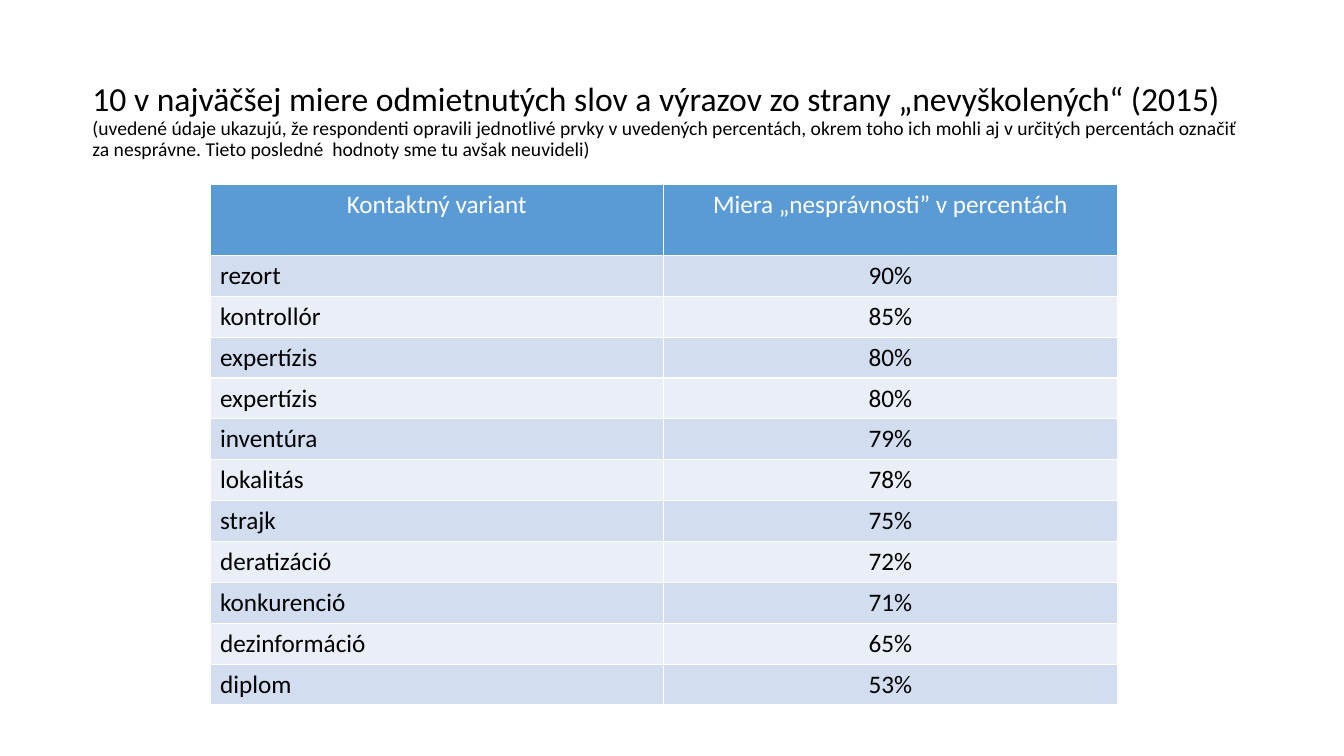
"""Builds a slide with a table of the words most often rejected by untrained respondents."""
from pptx import Presentation
from pptx.dml.color import RGBColor
from pptx.enum.text import MSO_ANCHOR, PP_ALIGN
from pptx.util import Pt

BLACK = RGBColor(0x00, 0x00, 0x00)
WHITE = RGBColor(0xFF, 0xFF, 0xFF)
HEADER_BLUE = RGBColor(0x5B, 0x9B, 0xD5)
BANDS = [RGBColor(0xD2, 0xDE, 0xEF), RGBColor(0xEA, 0xEF, 0xF7)]
LEFT, CENTER = PP_ALIGN.LEFT, PP_ALIGN.CENTER
MIDDLE = MSO_ANCHOR.MIDDLE

HEADER_HEIGHT, ROW_HEIGHT, COLUMN_WIDTH = 50.4, 29.2, 324

HEADINGS = ("Kontaktný variant", "Miera „nesprávnosti” v percentách")
REJECTED_WORDS = [
    ("rezort", "90%"),
    ("kontrollór", "85%"),
    ("expertízis", "80%"),
    ("expertízis", "80%"),
    ("inventúra", "79%"),
    ("lokalitás", "78%"),
    ("strajk", "75%"),
    ("deratizáció", "72%"),
    ("konkurenció", "71%"),
    ("dezinformáció", "65%"),
    ("diplom", "53%"),
]
TITLE = "10 v najväčšej miere odmietnutých slov a výrazov zo strany „nevyškolených“ (2015) "
NOTE_LINES = [
    "(uvedené údaje ukazujú, že respondenti opravili jednotlivé prvky v uvedených "
    "percentách, okrem toho ich mohli aj v určitých percentách označiť ",
    "za nesprávne. Tieto posledné  hodnoty sme tu avšak neuvideli)",
]


def add_span(para, text, size, color):
    """Add a formatted run to a paragraph."""
    span = para.add_run()
    span.text = text
    formats = {"name": "Calibri", "size": Pt(size), "bold": False}
    for attribute, value in formats.items():
        setattr(span.font, attribute, value)
    span.font.color.rgb = color


deck = Presentation()
deck.slide_width, deck.slide_height = Pt(960), Pt(540)
page = deck.slides.add_slide(deck.slide_layouts[6])

title_box = page.shapes.add_textbox(Pt(59), Pt(41.8), Pt(864), Pt(90))
title_frame = title_box.text_frame
title_frame.word_wrap = True
title_frame.vertical_anchor = MIDDLE
title_para = title_frame.paragraphs[0]
title_para.line_spacing = 0.9
add_span(title_para, TITLE, 24, BLACK)
add_span(title_para, NOTE_LINES[0], 14, BLACK)
title_para.add_line_break()
add_span(title_para, NOTE_LINES[1], 14, BLACK)

rows = [HEADINGS] + REJECTED_WORDS
table_height = HEADER_HEIGHT + ROW_HEIGHT * len(REJECTED_WORDS)
table = page.shapes.add_table(
    len(rows), 2, Pt(150), Pt(132), Pt(2 * COLUMN_WIDTH), Pt(table_height)
).table
for column in table.columns:
    column.width = Pt(COLUMN_WIDTH)

for row_index, texts in enumerate(rows):
    is_header = row_index == 0
    table.rows[row_index].height = Pt(HEADER_HEIGHT if is_header else ROW_HEIGHT)
    for column_index, text in enumerate(texts):
        cell = table.cell(row_index, column_index)
        cell.fill.solid()
        cell.fill.fore_color.rgb = HEADER_BLUE if is_header else BANDS[(row_index - 1) % 2]
        para = cell.text_frame.paragraphs[0]
        para.alignment = CENTER if is_header or column_index == 1 else LEFT
        add_span(para, text, 18, WHITE if is_header else BLACK)

deck.save("out.pptx")
